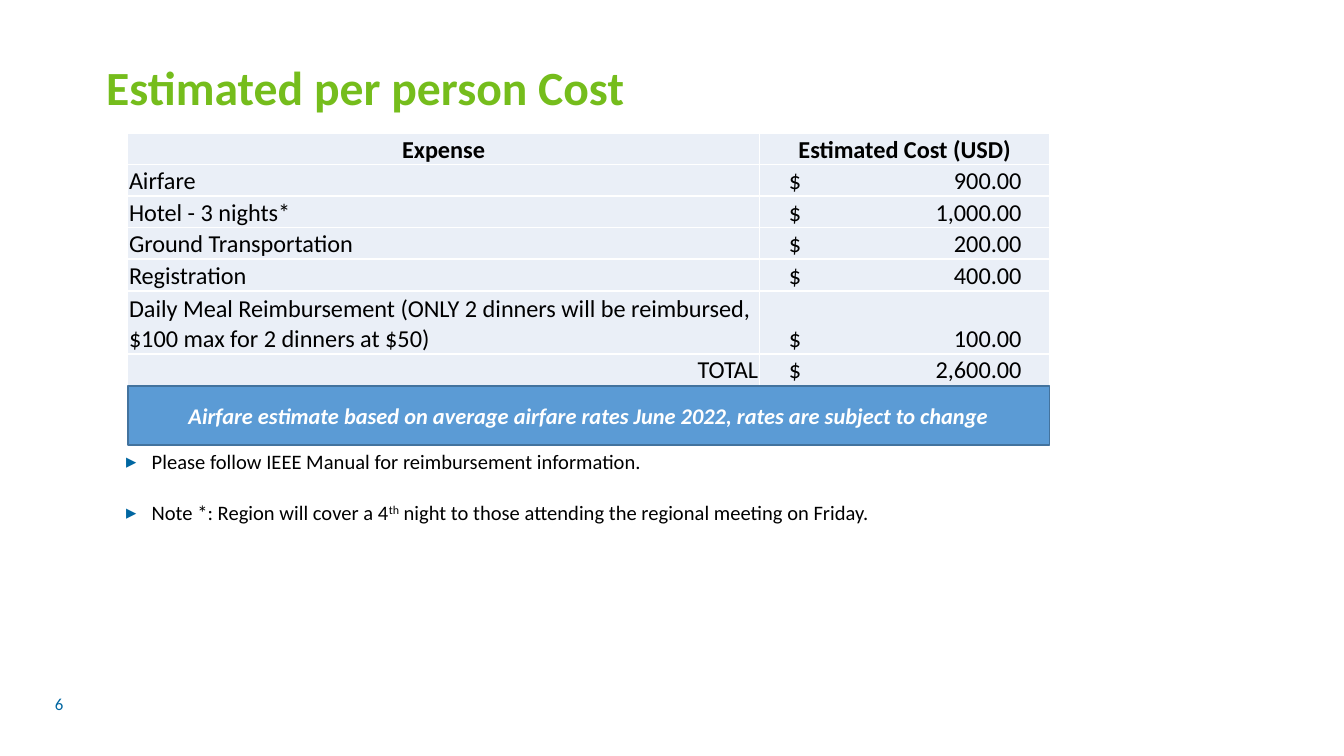
from lxml import etree
from pptx import Presentation
from pptx.dml.color import RGBColor
from pptx.enum.shapes import MSO_SHAPE
from pptx.enum.text import MSO_ANCHOR, MSO_AUTO_SIZE, PP_ALIGN
from pptx.oxml.ns import qn
from pptx.util import Inches, Pt

GREEN = RGBColor(0x75, 0xBD, 0x1C)
BLACK = RGBColor(0, 0, 0)
WHITE = RGBColor(0xFF, 0xFF, 0xFF)
DEEP_BLUE = RGBColor(0x00, 0x66, 0xA1)
CELL_FILL = RGBColor(0xEA, 0xEF, 0xF7)
BANNER_FILL = RGBColor(0x5B, 0x9B, 0xD5)
BANNER_LINE = RGBColor(0x43, 0x73, 0x9E)
LEFT, CENTER, RIGHT = PP_ALIGN.LEFT, PP_ALIGN.CENTER, PP_ALIGN.RIGHT
MIDDLE, BOTTOM = MSO_ANCHOR.MIDDLE, MSO_ANCHOR.BOTTOM
RECTANGLE = MSO_SHAPE.RECTANGLE
NO_AUTOFIT = MSO_AUTO_SIZE.NONE


def add_run(p, text, size, color, bold=False, italic=False):
    r = p.add_run()
    r.text = text
    formats = {"name": "Calibri", "size": Pt(size), "bold": bold, "italic": italic}
    for name, value in formats.items():
        setattr(r.font, name, value)
    r.font.color.rgb = color
    return r


def add_xml(parent, tag, **attributes):
    return etree.SubElement(parent, qn(tag), attributes)


prs = Presentation()
prs.slide_width = Inches(10)
prs.slide_height = prs.slide_width * 9 // 16
s = prs.slides.add_slide(prs.slide_layouts[5])

title = s.shapes.title
title.left, title.top = Inches(0.69), Inches(0.46)
title.width, title.height = Inches(8.62), Inches(0.45)
tf = title.text_frame
tf.auto_size = NO_AUTOFIT
tf.vertical_anchor = BOTTOM
p = tf.paragraphs[0]
p.alignment, p.line_spacing = LEFT, 0.9
add_run(p, "Estimated per person Cost", 25.5, GREEN, bold=True)

expenses = [
    ("Expense", "Estimated Cost (USD)"),
    ("Airfare", "900.00"),
    ("Hotel - 3 nights*", "1,000.00"),
    ("Ground Transportation", "200.00"),
    ("Registration", "400.00"),
    ("Daily Meal Reimbursement (ONLY 2 dinners will be reimbursed, "
     "$100 max for 2 dinners at $50)", "100.00"),
    ("TOTAL", "2,600.00"),
]
MEALS, TOTAL = 5, 6
row_height = 1.88 / 8
table = s.shapes.add_table(len(expenses), 2, Inches(0.95), Inches(0.99),
                           Inches(6.86), Inches(1.88)).table
table.first_row = table.horz_banding = False
table.columns[0].width, table.columns[1].width = Inches(4.7), Inches(2.16)

for i, row in enumerate(expenses):
    table.rows[i].height = Inches(row_height * (2 if i == MEALS else 1))
    for j, text in enumerate(row):
        cell = table.cell(i, j)
        is_amount = i > 0 and j == 1
        margins = {"margin_left": 0.22 if is_amount else 0.01,
                   "margin_right": 0.01, "margin_top": 0.01, "margin_bottom": 0}
        for name, value in margins.items():
            setattr(cell, name, Inches(value))
        cell.vertical_anchor = BOTTOM
        tcPr = cell._tc.get_or_add_tcPr()
        for side in ("a:lnL", "a:lnR", "a:lnT", "a:lnB"):
            fill = add_xml(add_xml(tcPr, side, w=str(Pt(1))), "a:solidFill")
            add_xml(fill, "a:srgbClr", val=str(WHITE))
        cell.fill.solid()
        cell.fill.fore_color.rgb = CELL_FILL
        p = cell.text_frame.paragraphs[0]
        p.alignment = CENTER if i == 0 else LEFT
        if is_amount:
            tabs = add_xml(p._p.get_or_add_pPr(), "a:tabLst")
            add_xml(tabs, "a:tab", pos=str(Inches(1.73)), algn="r")
            text = "$\t" + text
        elif i == TOTAL:
            p.alignment = RIGHT
        add_run(p, text, 13, BLACK, bold=i == 0)

banner = s.shapes.add_shape(RECTANGLE, Inches(0.95), Inches(2.87),
                            Inches(6.86), Inches(0.44))
banner.shadow.inherit = False
banner.fill.solid()
banner.fill.fore_color.rgb = BANNER_FILL
banner.line.color.rgb = BANNER_LINE
banner.line.width = Pt(1)
tf = banner.text_frame
tf.word_wrap = True
tf.vertical_anchor = MIDDLE
p = tf.paragraphs[0]
p.alignment = CENTER
add_run(p, "Airfare estimate based on average airfare rates June 2022, "
        "rates are subject to change", 12, WHITE, bold=True, italic=True)

notes = [
    (3.31, 8.62, [("Please follow IEEE Manual for reimbursement information.", 0)]),
    (3.69, 7.06, [("Note *: Region will cover a 4", 0), ("th", 30000),
                  (" night to those attending the regional meeting on Friday.", 0)]),
]
for top, width, runs in notes:
    tf = s.shapes.add_textbox(Inches(0.84), Inches(top),
                              Inches(width), Inches(0.43)).text_frame
    tf.word_wrap = True
    p = tf.paragraphs[0]
    p.line_spacing = 0.9
    pPr = p._p.get_or_add_pPr()
    pPr.set("marL", str(Inches(0.19)))
    pPr.set("indent", str(-Inches(0.19)))
    add_xml(add_xml(pPr, "a:buClr"), "a:srgbClr", val=str(DEEP_BLUE))
    add_xml(pPr, "a:buFont", typeface="Calibri")
    add_xml(pPr, "a:buChar", char="▸")
    for text, baseline in runs:
        r = add_run(p, text, 11, BLACK)
        if baseline:
            r._r.get_or_add_rPr().set("baseline", str(baseline))

tf = s.shapes.add_textbox(Inches(0.31), Inches(5.09),
                          Inches(0.53), Inches(0.3)).text_frame
tf.word_wrap = True
tf.vertical_anchor = MIDDLE
add_run(tf.paragraphs[0], "6", 9, DEEP_BLUE)

prs.save("out.pptx")
